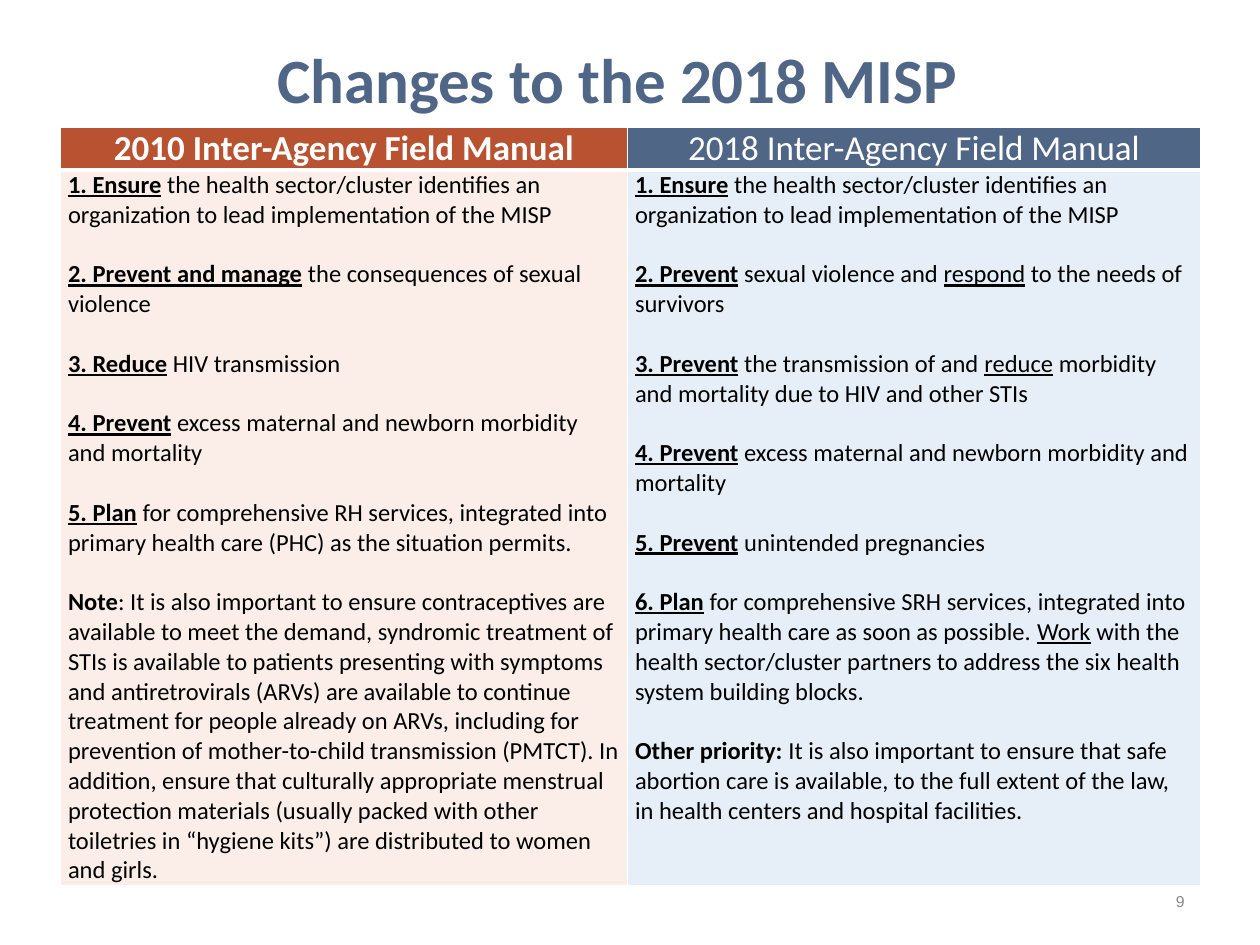
from lxml import etree
from pptx import Presentation
from pptx import util as u
from pptx.dml.color import RGBColor
from pptx.enum import text
from pptx.oxml.ns import qn

WHITE = RGBColor(0xFF, 0xFF, 0xFF)
BLACK = RGBColor(0, 0, 0)
GRAY = RGBColor(0x88, 0x88, 0x88)
NAVY = RGBColor(0x50, 0x66, 0x87)
RUST = RGBColor(0xB8, 0x52, 0x31)
PALE_RUST = RGBColor(0xFB, 0xED, 0xE7)
PALE_BLUE = RGBColor(0xE6, 0xEF, 0xF8)

# Styles of a run: objective verb, label, stressed word, plain text
VERB, LABEL, STRESS, PLAIN = (True, True), (True, False), (False, True), (False, False)


def objective(verb, *rest):
    """Runs of a numbered objective; the rest alternates plain and stressed."""
    styles = (PLAIN, STRESS)
    return [(verb, VERB), (" ", LABEL)] + [
        (words, styles[i % 2]) for i, words in enumerate(rest)]


ENSURE = objective("1. Ensure", "the health sector/cluster identifies an organization "
                   "to lead implementation of the MISP")
PREVENT_EXCESS = objective("4. Prevent", "excess maternal and newborn morbidity and mortality")

MANUAL_2010 = [
    ENSURE,
    objective("2. Prevent and manage", "the consequences of sexual violence"),
    objective("3. Reduce", "HIV transmission"),
    PREVENT_EXCESS,
    objective("5. Plan", "for comprehensive RH services, integrated into primary health "
              "care (PHC) as the situation permits."),
    [("Note", LABEL),
     (": It is also important to ensure contraceptives are available to meet the demand, "
      "syndromic treatment of STIs is available to patients presenting with symptoms and "
      "antiretrovirals (ARVs) are available to continue treatment for people already on "
      "ARVs, including for prevention of mother-to-child transmission (PMTCT). In addition, "
      "ensure that culturally appropriate menstrual protection materials (usually packed "
      "with other toiletries in “hygiene kits”) are distributed to women and girls.", PLAIN)],
]
MANUAL_2018 = [
    ENSURE,
    objective("2. Prevent", "sexual violence and ", "respond", " to the needs of survivors"),
    objective("3. Prevent", "the transmission of and ", "reduce",
              " morbidity and mortality due to HIV and other STIs"),
    PREVENT_EXCESS,
    objective("5. Prevent", "unintended pregnancies"),
    objective("6. Plan", "for comprehensive SRH services, integrated into primary health "
              "care as soon as possible. ", "Work", " with the health sector/cluster "
              "partners to address the six health system building blocks."),
    [("Other priority: ", LABEL),
     ("It is also important to ensure that safe abortion care is available, to the full "
      "extent of the law, in health centers and hospital facilities.", PLAIN)],
]


def add_run(paragraph, words, size, color, style=PLAIN, face="Calibri"):
    run = paragraph.add_run()
    run.text = words
    run.font.name, run.font.size = face, u.Pt(size)
    run.font.color.rgb = color
    run.font.bold, run.font.underline = style


def format_cell(cell, fill, bottom_width):
    cell.margin_left = cell.margin_right = u.Inches(0.06)
    cell.margin_top = cell.margin_bottom = 0
    # White borders go before the fill in the cell properties
    properties = cell._tc.get_or_add_tcPr()
    for side, width in (("L", 1), ("R", 1), ("T", 1), ("B", bottom_width)):
        line = etree.SubElement(properties, qn(f"a:ln{side}"), w=str(u.Pt(width)))
        paint = etree.SubElement(line, qn("a:solidFill"))
        etree.SubElement(paint, qn("a:srgbClr"), val=str(WHITE))
    cell.fill.solid()
    cell.fill.fore_color.rgb = fill


def fill_header(cell, heading, fill, style):
    format_cell(cell, fill, 3)
    paragraph = cell.text_frame.paragraphs[0]
    paragraph.alignment = text.PP_ALIGN.CENTER
    add_run(paragraph, heading, 20, WHITE, style)


def fill_objectives(cell, objectives, fill):
    format_cell(cell, fill, 1)
    frame = cell.text_frame
    for i, runs in enumerate(objectives):
        paragraph = frame.add_paragraph() if i else frame.paragraphs[0]
        if i:
            paragraph.space_before = u.Pt(17)
        for words, style in runs:
            add_run(paragraph, words, 14, BLACK, style)


def add_title(slide):
    title = slide.shapes.title
    title.left, title.top = u.Inches(0.4), u.Inches(0)
    title.width, title.height = u.Inches(9), u.Inches(1.25)
    title.text_frame.vertical_anchor = text.MSO_ANCHOR.MIDDLE
    paragraph = title.text_frame.paragraphs[0]
    paragraph.alignment = text.PP_ALIGN.CENTER
    add_run(paragraph, "Changes to the 2018 MISP", 36, NAVY, LABEL)


def add_comparison(slide):
    widths, heights = (4.5, 4.55), (0.34, 5.68)
    comparison = slide.shapes.add_table(
        2, 2, u.Inches(0.48), u.Inches(1.01),
        u.Inches(sum(widths)), u.Inches(sum(heights))).table
    for column, width in zip(comparison.columns, widths):
        column.width = u.Inches(width)
    for row, height in zip(comparison.rows, heights):
        row.height = u.Inches(height)
    manuals = (
        ("2010", LABEL, RUST, MANUAL_2010, PALE_RUST),
        ("2018", PLAIN, NAVY, MANUAL_2018, PALE_BLUE),
    )
    for i, (year, style, dark, objectives, pale) in enumerate(manuals):
        fill_header(comparison.cell(0, i), f"{year} Inter-Agency Field Manual", dark, style)
        fill_objectives(comparison.cell(1, i), objectives, pale)


def add_page_number(slide):
    frame = slide.shapes.add_textbox(
        u.Inches(7.17), u.Inches(6.95), u.Inches(2.33), u.Inches(0.4)).text_frame
    frame.word_wrap = True
    frame.vertical_anchor = text.MSO_ANCHOR.MIDDLE
    frame.paragraphs[0].alignment = text.PP_ALIGN.RIGHT
    add_run(frame.paragraphs[0], "9", 9, GRAY, face="Arial")


def main():
    deck = Presentation()
    deck.slide_width, deck.slide_height = u.Inches(10), u.Inches(7.5)
    slide = deck.slides.add_slide(deck.slide_layouts[5])  # Title Only
    add_title(slide)
    add_comparison(slide)
    add_page_number(slide)
    deck.save("out.pptx")


if __name__ == "__main__":
    main()
